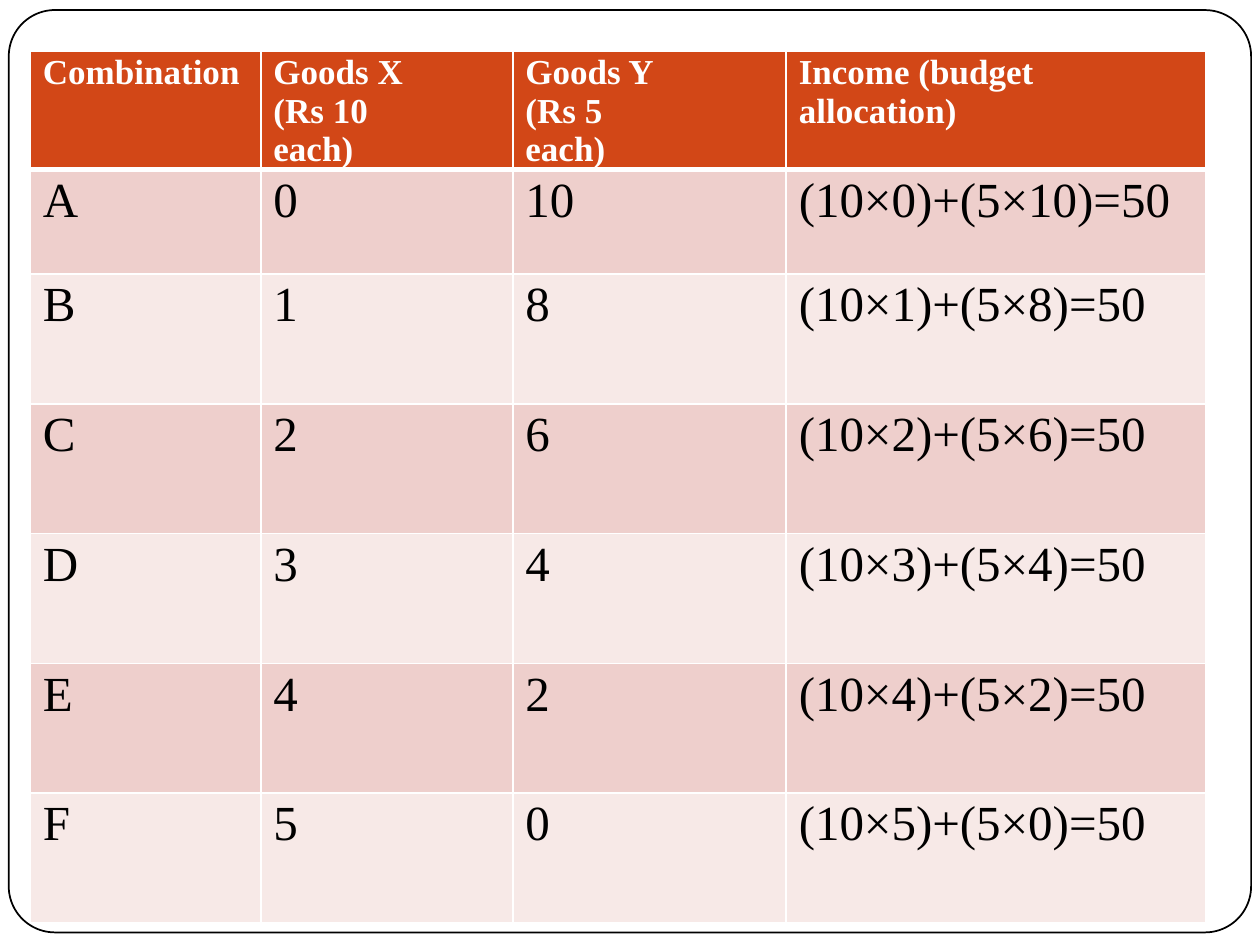
import dataclasses
import pptx
import pptx.util
import pptx.dml.color
import pptx.enum.shapes
import pptx.oxml
import pptx.oxml.ns
import pptx.slide
import pptx.table

Inches = pptx.util.Inches
Pt = pptx.util.Pt
FONT = "Times New Roman"


@dataclasses.dataclass
class Column:
    head: str
    width: float
    inset: float = 0


COLUMNS = [
    Column("Combination", 1.83),
    Column("Goods X (Rs 10 each)", 2, 0.8),
    Column("Goods Y (Rs 5 each)", 2.17, 0.9),
    Column("Income (budget allocation)", 3.33, 0.5),
]
HEIGHTS = [0.83, 0.83] + [1.03] * 5
BANDS = ["F7E9E7", "EECFCC"]


def color(code: str) -> pptx.dml.color.RGBColor:
    return pptx.dml.color.RGBColor.from_string(code)


def write(frame, text: str, *, size: float, ink: str, bold: bool = False,
          before: float = 0, line: float | None = None) -> None:
    para = frame.paragraphs[0]
    para.space_before = Pt(before)
    if line:
        para.line_spacing = Pt(line)
    run = para.add_run()
    run.text = text
    run.font.name = FONT
    run.font.size = Pt(size)
    run.font.bold = bold
    run.font.color.rgb = color(ink)


def edge(cell: pptx.table._Cell, **widths: float) -> None:
    props = cell._tc.get_or_add_tcPr()
    for spot, side in enumerate("LRTB"):
        props.insert(spot, pptx.oxml.parse_xml(
            f'<a:ln{side} {pptx.oxml.ns.nsdecls("a")} w="{Pt(widths.get(side, 1))}">'
            f'<a:solidFill><a:srgbClr val="FFFFFF"/></a:solidFill></a:ln{side}>'))


def paint(cell: pptx.table._Cell, fill: str, inset: float = 0, top: float = 0) -> None:
    cell.margin_left = Inches(0.1)
    cell.margin_right = Inches(inset)
    cell.margin_top = Inches(top)
    cell.margin_bottom = 0
    cell.fill.solid()
    cell.fill.fore_color.rgb = color(fill)


def draw_frame(slide: pptx.slide.Slide) -> None:
    kind = pptx.enum.shapes.MSO_SHAPE.ROUNDED_RECTANGLE
    frame = slide.shapes.add_shape(
        kind, Inches(0.07), Inches(0.08), Inches(9.86), Inches(7.32))
    frame.adjustments[0] = 0.05
    frame.shadow.inherit = False
    frame.fill.background()
    frame.line.color.rgb = color("000000")
    frame.line.width = Pt(1)


def draw_table(slide: pptx.slide.Slide) -> None:
    table = slide.shapes.add_table(
        len(HEIGHTS), len(COLUMNS), Inches(0.24), Inches(0.41),
        Inches(sum(col.width for col in COLUMNS)), Inches(sum(HEIGHTS))).table
    for row, height in zip(table.rows, HEIGHTS):
        row.height = Inches(height)
    for spot, col in enumerate(COLUMNS):
        table.columns[spot].width = Inches(col.width)
        cell = table.cell(0, spot)
        paint(cell, "D24717", col.inset, 0.01)
        edge(cell, B=3)
        write(cell.text_frame, col.head, size=20, ink="FFFFFF", bold=True, before=0.8)
    for count, name in enumerate("ABCDEF"):
        other = 10 - 2 * count
        texts = [name, str(count), str(other), f"(10×{count})+(5×{other})=50"]
        row = count + 1
        for spot, text in enumerate(texts):
            cell = table.cell(row, spot)
            paint(cell, BANDS[row % 2])
            edge(cell, T=3 if row == 1 else 1)
            write(cell.text_frame, text, size=28, ink="000000", line=33.3)


def main() -> None:
    deck = pptx.Presentation()
    deck.slide_width = Inches(10)
    deck.slide_height = Inches(7.5)
    slide = deck.slides.add_slide(deck.slide_layouts[6])
    draw_frame(slide)
    draw_table(slide)
    deck.save("out.pptx")


if __name__ == "__main__":
    main()
